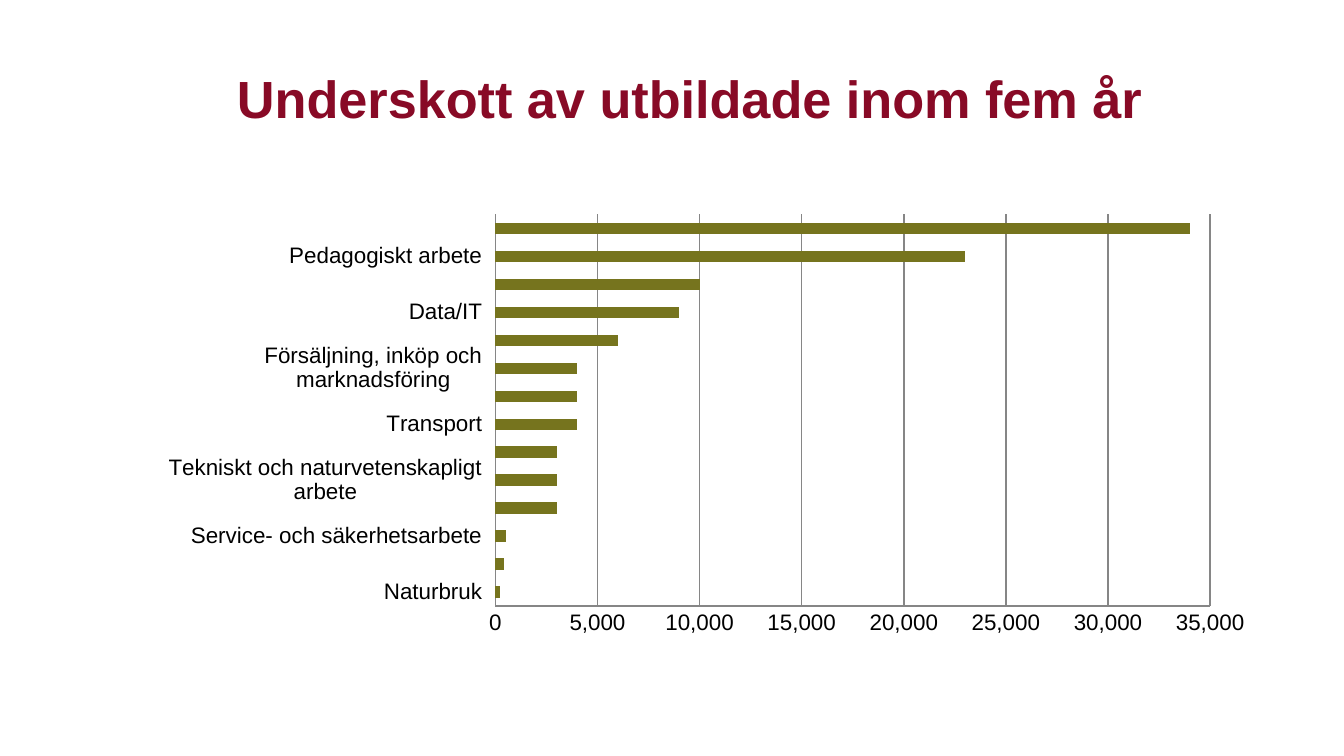
from dataclasses import dataclass

from lxml import etree
from pptx import Presentation
from pptx.chart.data import CategoryChartData
from pptx.dml.color import RGBColor
from pptx.enum.chart import XL_CHART_TYPE, XL_TICK_LABEL_POSITION, XL_TICK_MARK
from pptx.enum.text import MSO_ANCHOR, PP_ALIGN
from pptx.oxml.ns import qn
from pptx.util import Cm, Pt

BAR_CLUSTERED = XL_CHART_TYPE.BAR_CLUSTERED
LABELS_LOW = XL_TICK_LABEL_POSITION.LOW
TICK_NONE = XL_TICK_MARK.NONE
MIDDLE = MSO_ANCHOR.MIDDLE
CENTER = PP_ALIGN.CENTER
BLANK_LAYOUT = 6


@dataclass(frozen=True)
class Theme:
    font: str = "Arial"
    title_color: RGBColor = RGBColor(0x88, 0x0A, 0x26)
    text_color: RGBColor = RGBColor(0, 0, 0)
    bar_color: RGBColor = RGBColor(0x76, 0x74, 0x1E)
    line_color: RGBColor = RGBColor(0x86, 0x86, 0x86)
    title_size: Pt = Pt(28)
    chart_size: Pt = Pt(18)
    axis_size: Pt = Pt(12)


@dataclass(frozen=True)
class Frame:
    left: float
    top: float
    width: float
    height: float

    def lengths(self) -> tuple:
        return Cm(self.left), Cm(self.top), Cm(self.width), Cm(self.height)


@dataclass(frozen=True)
class Shortage:
    field: str
    people: int


THEME = Theme()
TITLE_FRAME = Frame(2.36, 0.66, 21.59, 2.39)
CHART_FRAME = Frame(2.29, 3.53, 21.44, 8.71)
PLOT_LAYOUT = {"x": 0.33, "y": 0.06, "w": 0.63, "h": 0.85}
SHORTAGES = [
    Shortage("Naturbruk", 200),
    Shortage("Administration, ekonomi och juridik", 400),
    Shortage("Service- och säkerhetsarbete", 500),
    Shortage("Tillverkningsarbete", 3000),
    Shortage("Tekniskt och naturvetenskapligt arbete", 3000),
    Shortage("Hotell, restaurang och storhushåll", 3000),
    Shortage("Transport", 4000),
    Shortage("Installation, drift och underhåll", 4000),
    Shortage("Försäljning, inköp och marknadsföring", 4000),
    Shortage("Bygg och anläggning", 6000),
    Shortage("Data/IT", 9000),
    Shortage("Socialt arbete", 10000),
    Shortage("Pedagogiskt arbete", 23000),
    Shortage("Hälso- och sjukvård", 34000),
]


def set_all(target, values: dict) -> None:
    for name, value in values.items():
        setattr(target, name, value)


def style_font(font, size: Pt, color: RGBColor, bold: bool = False) -> None:
    set_all(font, {"name": THEME.font, "size": size, "bold": bold})
    font.color.rgb = color


def add_title(page, frame: Frame, text: str) -> None:
    box = page.shapes.add_textbox(*frame.lengths())
    set_all(box.text_frame, {
        "word_wrap": True, "vertical_anchor": MIDDLE, "margin_left": 0,
        "margin_right": Cm(0.25), "margin_top": Cm(0.13), "margin_bottom": Cm(0.13),
    })
    para = box.text_frame.paragraphs[0]
    para.alignment = CENTER
    span = para.add_run()
    span.text = text
    style_font(span.font, THEME.title_size, THEME.title_color, bold=True)


def place_plot(chart, layout: dict) -> None:
    plot_area = chart.plots[0]._element.getparent()
    for old in plot_area.findall(qn("c:layout")):
        plot_area.remove(old)
    holder = etree.Element(qn("c:layout"))
    manual = etree.SubElement(holder, qn("c:manualLayout"))
    settings = {"layoutTarget": "inner", "xMode": "edge", "yMode": "edge", **layout}
    for name, value in settings.items():
        etree.SubElement(manual, qn(f"c:{name}")).set("val", str(value))
    plot_area.insert(0, holder)


def style_axis(axis, values: dict) -> None:
    set_all(axis, {"major_tick_mark": TICK_NONE, "minor_tick_mark": TICK_NONE, **values})
    style_font(axis.tick_labels.font, THEME.axis_size, THEME.text_color)
    lines = [axis.format.line]
    if axis.has_major_gridlines:
        lines.append(axis.major_gridlines.format.line)
    for line in lines:
        line.color.rgb = THEME.line_color
        line.width = Pt(0.75)


def add_shortage_chart(page, frame: Frame, shortages: list[Shortage]) -> None:
    data = CategoryChartData(number_format="#,##0")
    data.categories = [shortage.field for shortage in shortages]
    data.add_series("Series 1", [shortage.people for shortage in shortages])
    chart = page.shapes.add_chart(BAR_CLUSTERED, *frame.lengths(), data).chart
    set_all(chart, {"has_legend": False, "has_title": False})
    style_font(chart.font, THEME.chart_size, THEME.text_color)

    bars = chart.plots[0]
    set_all(bars, {"gap_width": 150, "vary_by_categories": False})
    fill = bars.series[0].format.fill
    fill.solid()
    fill.fore_color.rgb = THEME.bar_color

    style_axis(chart.category_axis, {
        "has_major_gridlines": False, "tick_label_position": LABELS_LOW,
    })
    style_axis(chart.value_axis, {
        "has_major_gridlines": True, "minimum_scale": 0,
        "maximum_scale": 35000, "major_unit": 5000,
    })
    set_all(chart.value_axis.tick_labels, {
        "number_format": "#,##0", "number_format_is_linked": False,
    })
    place_plot(chart, PLOT_LAYOUT)


def main() -> None:
    deck = Presentation()
    set_all(deck, {"slide_width": Cm(25.4), "slide_height": Cm(14.29)})
    page = deck.slides.add_slide(deck.slide_layouts[BLANK_LAYOUT])
    add_title(page, TITLE_FRAME, "Underskott av utbildade inom fem år")
    add_shortage_chart(page, CHART_FRAME, SHORTAGES)
    deck.save("out.pptx")


if __name__ == "__main__":
    main()
